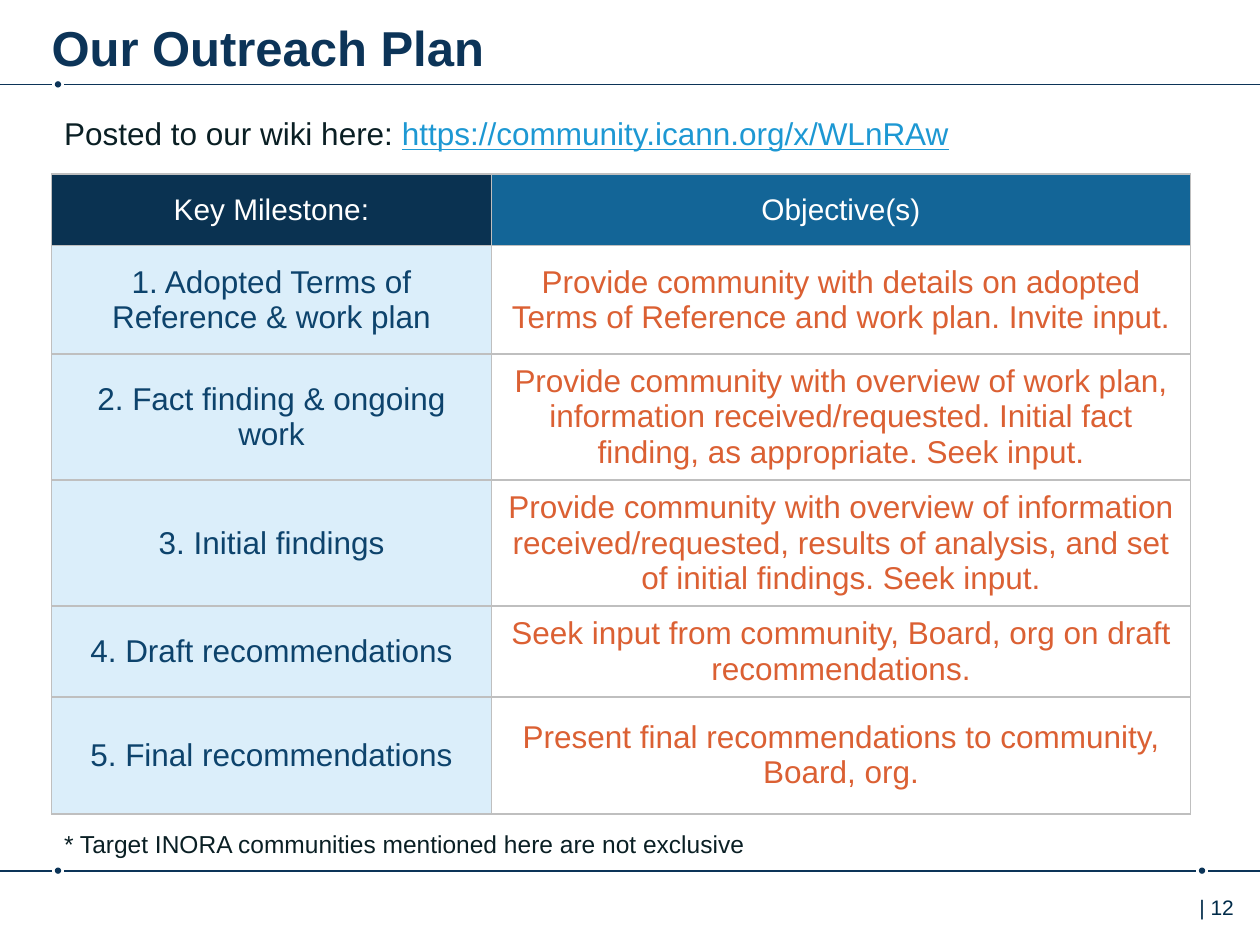
from dataclasses import dataclass

from lxml.etree import SubElement
from pptx import Presentation
from pptx.dml.color import RGBColor
from pptx.enum.shapes import MSO_CONNECTOR, MSO_SHAPE
from pptx.enum.text import MSO_ANCHOR, PP_ALIGN
from pptx.oxml import parse_xml
from pptx.oxml.ns import nsdecls, qn
from pptx.util import Inches, Pt


@dataclass(frozen=True)
class Theme:
    font: str = "Arial"
    navy: str = "0C3458"
    page: str = "002B49"
    ink: str = "0A1F24"
    link: str = "1D98D3"
    white: str = "FFFFFF"
    header_fills: tuple = ("0A3251", "136597")
    body_fills: tuple = ("CDE8F9", "FFFFFF")
    body_inks: tuple = ("0D436C", "DB6033")
    body_opacity: int = 70
    border: str = "BFBFBF"
    title_size: float = 28
    header_size: float = 17
    body_size: float = 18
    note_size: float = 14
    page_size: float = 12
    line_width: float = 1


THEME = Theme()
SLIDE_W, SLIDE_H = 10, 7.5
MARGIN = 0.41
DOT = 0.05
DOT_GAP = 0.1  # opening in a rule around its dot
LEFT_DOT, RIGHT_DOT = 0.46, 9.54
TEXT_W = 7.71
COLUMNS = (3.49, 5.55)
ROWS = (0.57, 0.86, 0.87, 0.93, 0.72, 0.93)

MILESTONES = (
    ("Key Milestone:", "Objective(s)"),
    ("1. Adopted Terms of Reference & work plan",
     "Provide community with details on adopted Terms of Reference and work plan. Invite input."),
    ("2. Fact finding & ongoing work",
     "Provide community with overview of work plan, information received/requested. "
     "Initial fact finding, as appropriate. Seek input."),
    ("3. Initial findings",
     "Provide community with overview of information received/requested, results of "
     "analysis, and set of initial findings. Seek input."),
    ("4. Draft recommendations",
     "Seek input from community, Board, org on draft recommendations."),
    ("5. Final recommendations",
     "Present final recommendations to community, Board, org."),
)


def rgb(color):
    return RGBColor.from_string(color)


def inches(*lengths):
    return [Inches(length) for length in lengths]


def add_run(paragraph, text, size, color, **formats):
    run = paragraph.add_run()
    run.text = text
    run.font.color.rgb = rgb(color)
    for name, value in {"name": THEME.font, "size": Pt(size), **formats}.items():
        setattr(run.font, name, value)


def add_text(slide, box, size, *pieces):
    """Place one line of text made of (text, colour, formats) pieces."""
    frame = slide.shapes.add_textbox(*inches(*box)).text_frame
    frame.word_wrap = True
    for text, color, formats in pieces:
        add_run(frame.paragraphs[0], text, size, color, **formats)


def add_title(slide, box, text):
    title = slide.shapes.title
    title.left, title.top, title.width, title.height = inches(*box)
    frame = title.text_frame
    formats = {"margin_left": 0, "margin_right": 0, "margin_top": Inches(0.09),
               "vertical_anchor": MSO_ANCHOR.TOP, "word_wrap": True}
    for name, value in formats.items():
        setattr(frame, name, value)
    frame.paragraphs[0].alignment = PP_ALIGN.LEFT
    add_run(frame.paragraphs[0], text, THEME.title_size, THEME.navy, bold=True)


def add_dotted_rule(slide, y, dot_centers):
    """Draw a full-width rule that opens around each dot."""
    edges = [0]
    for center in dot_centers:
        edges += [center - DOT_GAP / 2, center + DOT_GAP / 2]
        dot = slide.shapes.add_shape(
            MSO_SHAPE.OVAL, *inches(center - DOT / 2, y - DOT / 2, DOT, DOT))
        dot.shadow.inherit = False
        dot.fill.solid()
        dot.fill.fore_color.rgb = rgb(THEME.navy)
        dot.line.fill.background()
    edges.append(SLIDE_W)
    for start, end in zip(edges[::2], edges[1::2]):
        rule = slide.shapes.add_connector(MSO_CONNECTOR.STRAIGHT, *inches(start, y, end, y))
        rule.line.color.rgb = rgb(THEME.navy)
        rule.line.width = Pt(THEME.line_width)
        SubElement(rule._element.spPr, qn("a:effectLst"))


def style_cell(cell, fill, opacity):
    cell.vertical_anchor = MSO_ANCHOR.MIDDLE
    cell.fill.solid()
    cell.fill.fore_color.rgb = rgb(fill)
    properties = cell._tc.get_or_add_tcPr()
    if opacity < 100:
        color = properties.find(qn("a:solidFill")).find(qn("a:srgbClr"))
        SubElement(color, qn("a:alpha")).set("val", str(opacity * 1000))
    for index, side in enumerate("LRTB"):  # borders come before the fill
        properties.insert(index, parse_xml(
            f'<a:ln{side} {nsdecls("a")} w="{Pt(THEME.line_width)}"><a:solidFill>'
            f'<a:srgbClr val="{THEME.border}"/></a:solidFill></a:ln{side}>'))


def add_milestone_table(slide, left, top):
    box = inches(left, top, sum(COLUMNS), sum(ROWS))
    table = slide.shapes.add_table(len(ROWS), len(COLUMNS), *box).table
    for column, width in zip(table.columns, COLUMNS):
        column.width = Inches(width)
    for r, (height, texts) in enumerate(zip(ROWS, MILESTONES)):
        table.rows[r].height = Inches(height)
        header = r == 0
        fills = THEME.header_fills if header else THEME.body_fills
        inks = (THEME.white,) * 2 if header else THEME.body_inks
        size = THEME.header_size if header else THEME.body_size
        for c, text in enumerate(texts):
            cell = table.cell(r, c)
            style_cell(cell, fills[c], 100 if header else THEME.body_opacity)
            paragraph = cell.text_frame.paragraphs[0]
            paragraph.alignment = PP_ALIGN.CENTER
            add_run(paragraph, text, size, inks[c])


def main():
    deck = Presentation()
    deck.slide_width, deck.slide_height = inches(SLIDE_W, SLIDE_H)
    slide = deck.slides.add_slide(deck.slide_layouts[5])

    # Frame: header rule, footer rule and page number
    add_dotted_rule(slide, 0.67, (LEFT_DOT,))
    add_dotted_rule(slide, 6.91, (LEFT_DOT, RIGHT_DOT))
    add_text(slide, (9.42, 7.05, 0.58, 0.4), THEME.page_size, ("| 12", THEME.page, {}))

    # Content: title, wiki link, table and footnote
    add_title(slide, (MARGIN, 0.05, 8.76, 0.49), "Our Outreach Plan")
    add_text(slide, (MARGIN, 0.86, TEXT_W, 0.4), THEME.body_size,
             ("Posted to our wiki here: ", THEME.ink, {}),
             ("https://community.icann.org/x/WLnRAw", THEME.link, {"underline": True}))
    add_milestone_table(slide, MARGIN, 1.38)
    add_text(slide, (MARGIN, 6.53, TEXT_W, 0.34), THEME.note_size,
             ("* Target INORA communities mentioned here are not exclusive", THEME.ink, {}))

    deck.save("out.pptx")


if __name__ == "__main__":
    main()
